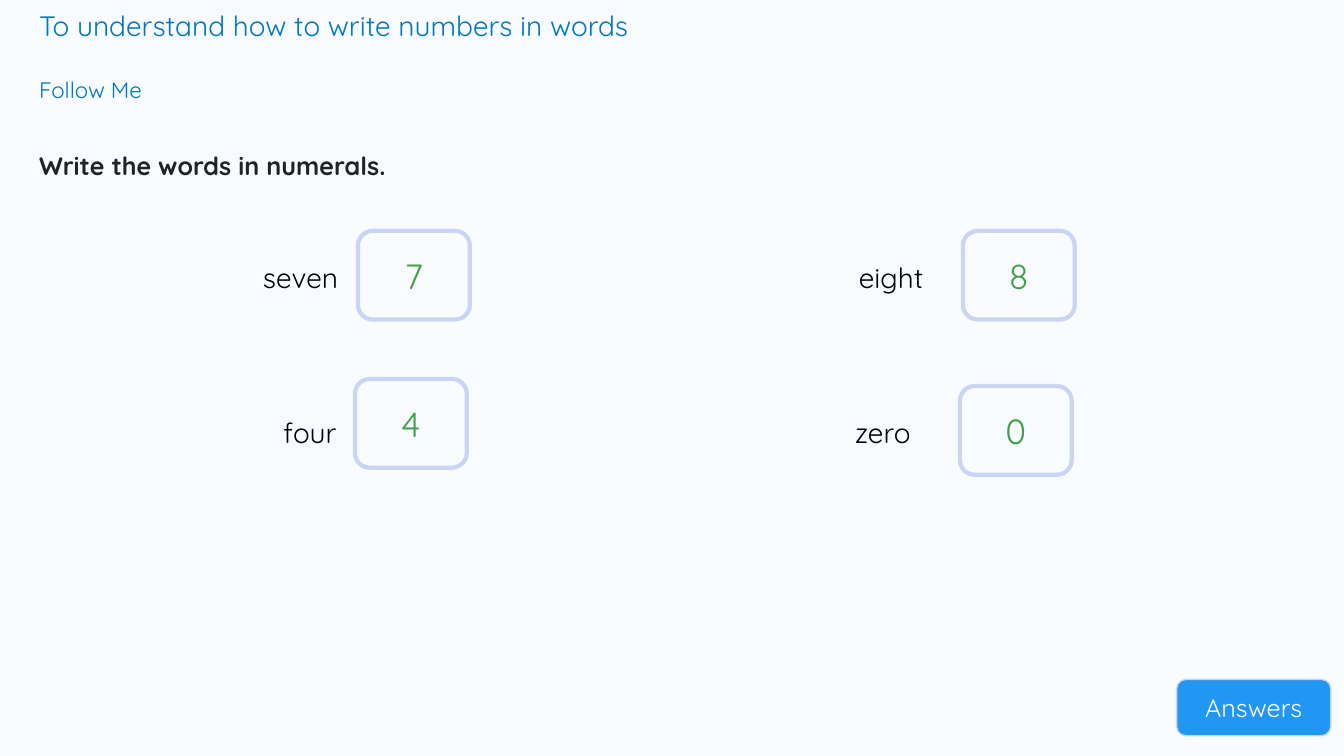
from dataclasses import dataclass

from pptx import Presentation
from pptx.dml.color import RGBColor
from pptx.enum.shapes import MSO_SHAPE
from pptx.enum.text import MSO_ANCHOR, PP_ALIGN
from pptx.util import Inches, Pt


@dataclass(frozen=True)
class Theme:
    font: str = "Quicksand"
    background: str = "F8FBFF"
    heading: str = "0277BD"
    instruction: str = "222222"
    word: str = "000000"
    answer: str = "43A047"
    outline: str = "CCD4F4"
    button: str = "2196F3"
    button_label: str = "FFFFFF"
    title_size: int = 20
    section_size: int = 16
    body_size: int = 18
    word_size: int = 20
    answer_size: int = 25


theme = Theme()

prs = Presentation()
prs.slide_width = Inches(13.33)
prs.slide_height = Inches(7.5)
slide = prs.slides.add_slide(prs.slide_layouts[6])
slide.background.fill.solid()
slide.background.fill.fore_color.rgb = RGBColor.from_string(theme.background)


def write(shape, text, size, color, margin=0.05, bold=False):
    frame = shape.text_frame
    frame.word_wrap = True
    frame.margin_left = frame.margin_right = Inches(0.1)
    frame.margin_top = frame.margin_bottom = Inches(margin)
    frame.text = text
    paragraph = frame.paragraphs[0]
    font = paragraph.runs[0].font
    font.name = theme.font
    font.size = Pt(size)
    font.bold = bold
    font.color.rgb = RGBColor.from_string(color)
    return paragraph


def add_rounded_box(left, top, width, height, line_width):
    box = slide.shapes.add_shape(
        MSO_SHAPE.ROUNDED_RECTANGLE,
        Inches(left), Inches(top), Inches(width), Inches(height))
    box.shadow.inherit = False
    box.adjustments[0] = 0.167
    box.fill.background()
    box.line.color.rgb = RGBColor.from_string(theme.outline)
    box.line.width = Pt(line_width)
    box.text_frame.vertical_anchor = MSO_ANCHOR.MIDDLE
    return box


# Headings and instruction
headings = [
    ("To understand how to write numbers in words", 0.04, 12.34, 0.44,
     theme.title_size, theme.heading, False, 1.0),
    ("Follow Me", 0.71, 2.97, 0.46,
     theme.section_size, theme.heading, False, 1.0),
    ("Write the words in numerals.", 1.29, 12.84, 0.56,
     theme.body_size, theme.instruction, True, 1.5),
]
for text, top, width, height, size, color, bold, spacing in headings:
    heading = slide.shapes.add_textbox(
        Inches(0.29), Inches(top), Inches(width), Inches(height))
    write(heading, text, size, color, bold=bold).line_spacing = spacing

# Questions: word, numeral, word left/top/width, answer box left/top
questions = [
    ("seven", "7", 2.51, 2.48, 1.92, 3.55, 2.29),
    ("four", "4", 2.71, 4.02, 0.81, 3.52, 3.76),
    ("eight", "8", 8.42, 2.48, 1.01, 9.55, 2.29),
    ("zero", "0", 8.38, 4.02, 0.81, 9.52, 3.83),
]
for word, numeral, word_left, word_top, word_width, box_left, box_top in questions:
    word_label = slide.shapes.add_textbox(
        Inches(word_left), Inches(word_top), Inches(word_width), Inches(0.54))
    write(word_label, word, theme.word_size, theme.word, margin=0.1)
    answer_box = add_rounded_box(box_left, box_top, 1.11, 0.88, 3)
    answer = write(answer_box, numeral, theme.answer_size, theme.answer, margin=0.1)
    answer.alignment = PP_ALIGN.CENTER

# Answers button
answers_button = add_rounded_box(11.67, 6.74, 1.53, 0.56, 1)
answers_button.fill.solid()
answers_button.fill.fore_color.rgb = RGBColor.from_string(theme.button)
button_label = write(answers_button, "Answers", theme.body_size, theme.button_label)
button_label.alignment = PP_ALIGN.CENTER

prs.save("out.pptx")
